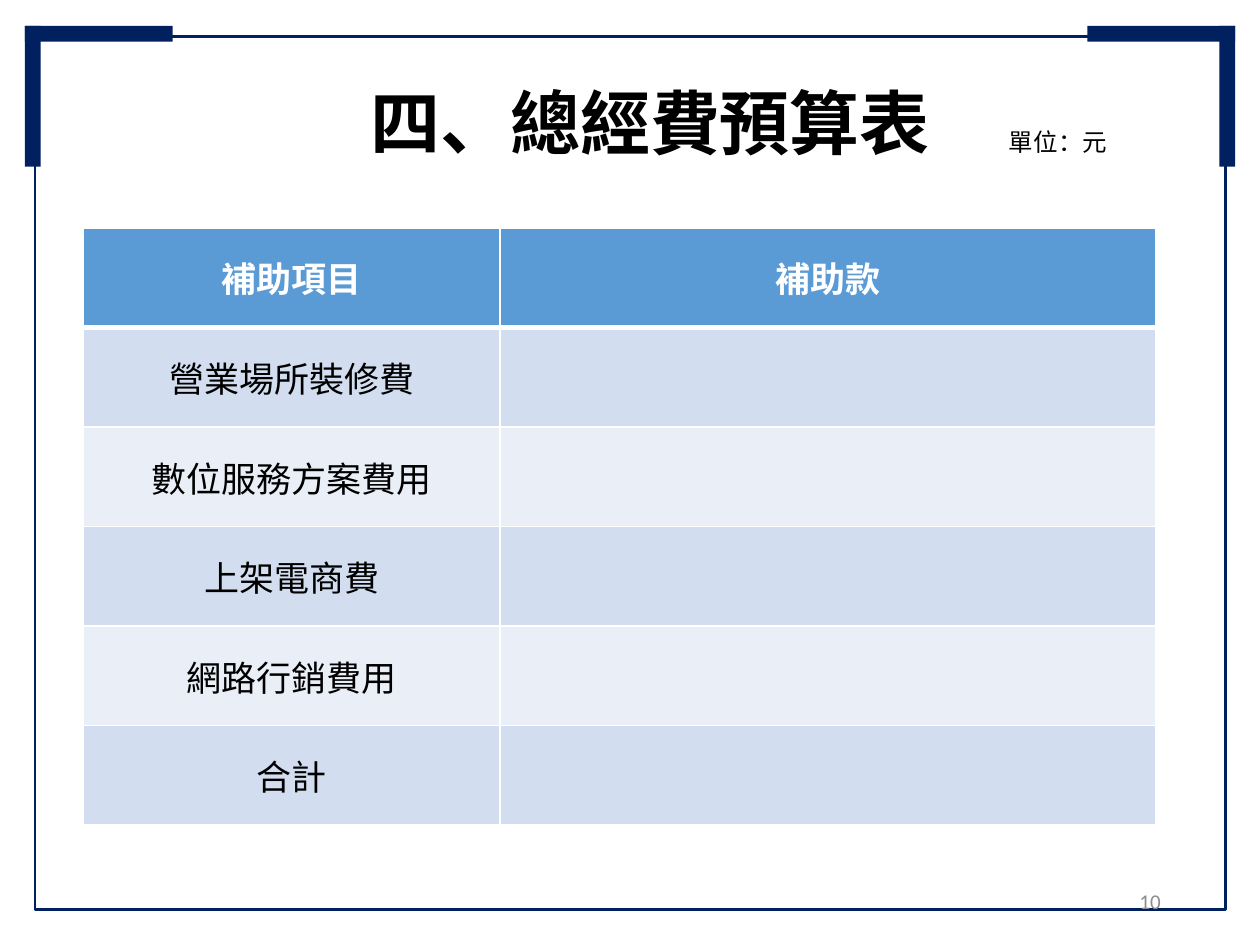
from lxml.etree import SubElement
from pptx import Presentation
from pptx.dml.color import RGBColor
from pptx.enum.shapes import MSO_SHAPE
from pptx.enum.text import MSO_ANCHOR, PP_ALIGN
from pptx.oxml.ns import qn
from pptx.util import Pt

COLORS = {
    "navy": "002060", "black": "000000", "white": "FFFFFF", "gray": "8C8C8C",
    "head": "5B9BD5", "odd": "D2DEEF", "even": "EAEFF7",
}
SANS = "Noto Sans CJK SC"


def color(name):
    return RGBColor.from_string(COLORS[name])


def write(frame, text, size, tint="black", bold=False, align=PP_ALIGN.CENTER, face=SANS):
    """Add one styled run, setting the Latin and East Asian fonts alike."""
    para = frame.paragraphs[0]
    para.alignment = align
    run = para.add_run()
    run.text = text
    font = run.font
    font.size, font.bold, font.name = Pt(size), bold, face
    font.color.rgb = color(tint)
    SubElement(run._r.rPr, qn("a:ea"), typeface=face)


deck = Presentation()
deck.slide_width, deck.slide_height = Pt(720), Pt(540)
slide = deck.slides.add_slide(deck.slide_layouts[6])
shapes = slide.shapes

# Page frame
frame = shapes.add_shape(MSO_SHAPE.RECTANGLE, Pt(20), Pt(20.8), Pt(680.4), Pt(499))
frame.shadow.inherit = False
frame.fill.background()
frame.line.color.rgb = color("navy")
frame.line.width = Pt(1.5)

# Corner brackets, mirrored left and right
long, thick, edge, top = 84.5, 9, 14.2, 14.8
for wide, high in ((long, thick), (thick, long - 4)):
    for left in (edge, 720 - edge - wide):
        bar = shapes.add_shape(MSO_SHAPE.RECTANGLE, Pt(left), Pt(top), Pt(wide), Pt(high))
        bar.shadow.inherit = False
        bar.fill.solid()
        bar.fill.fore_color.rgb = color("navy")
        bar.line.fill.background()

# Title, unit and page number
labels = [
    ((508.3, 500.4, 162, 28.8), "10", 12, "gray", False, PP_ALIGN.RIGHT, "Calibri", MSO_ANCHOR.MIDDLE),
    ((47.5, 33.1, 648, 72.7), "四、總經費預算表", 40, "black", True, PP_ALIGN.CENTER, SANS, MSO_ANCHOR.MIDDLE),
    ((569.5, 69.1, 108, 24.5), "單位：元", 14, "black", False, PP_ALIGN.LEFT, SANS, MSO_ANCHOR.TOP),
]
for place, text, size, tint, bold, align, face, anchor in labels:
    box = shapes.add_textbox(*[Pt(n) for n in place]).text_frame
    box.word_wrap = True
    box.vertical_anchor = anchor
    write(box, text, size, tint, bold, align, face)

# Budget table
rows = [
    ("補助項目", "補助款"),
    ("營業場所裝修費", ""),
    ("數位服務方案費用", ""),
    ("上架電商費", ""),
    ("網路行銷費用", ""),
    ("合計", ""),
]
widths, height = (238, 375), 56.9
table = shapes.add_table(
    len(rows), len(widths), Pt(47.7), Pt(130.2), Pt(sum(widths)), Pt(height * len(rows))
).table
for col, width in zip(table.columns, widths):
    col.width = Pt(width)
for r, texts in enumerate(rows):
    table.rows[r].height = Pt(height)
    band = "head" if r == 0 else "odd" if r % 2 else "even"
    for c, text in enumerate(texts):
        cell = table.cell(r, c)
        cell.vertical_anchor = MSO_ANCHOR.MIDDLE
        props = cell._tc.get_or_add_tcPr()
        for side in "LRTB":
            thick_rule = (r, side) in ((0, "B"), (1, "T"))
            line = SubElement(props, qn(f"a:ln{side}"), w=str(Pt(3 if thick_rule else 1)))
            SubElement(SubElement(line, qn("a:solidFill")), qn("a:srgbClr"), val=COLORS["white"])
        cell.fill.solid()
        cell.fill.fore_color.rgb = color(band)
        if text:
            write(cell.text_frame, text, 20, "black" if r else "white", r == 0)

deck.save("out.pptx")
